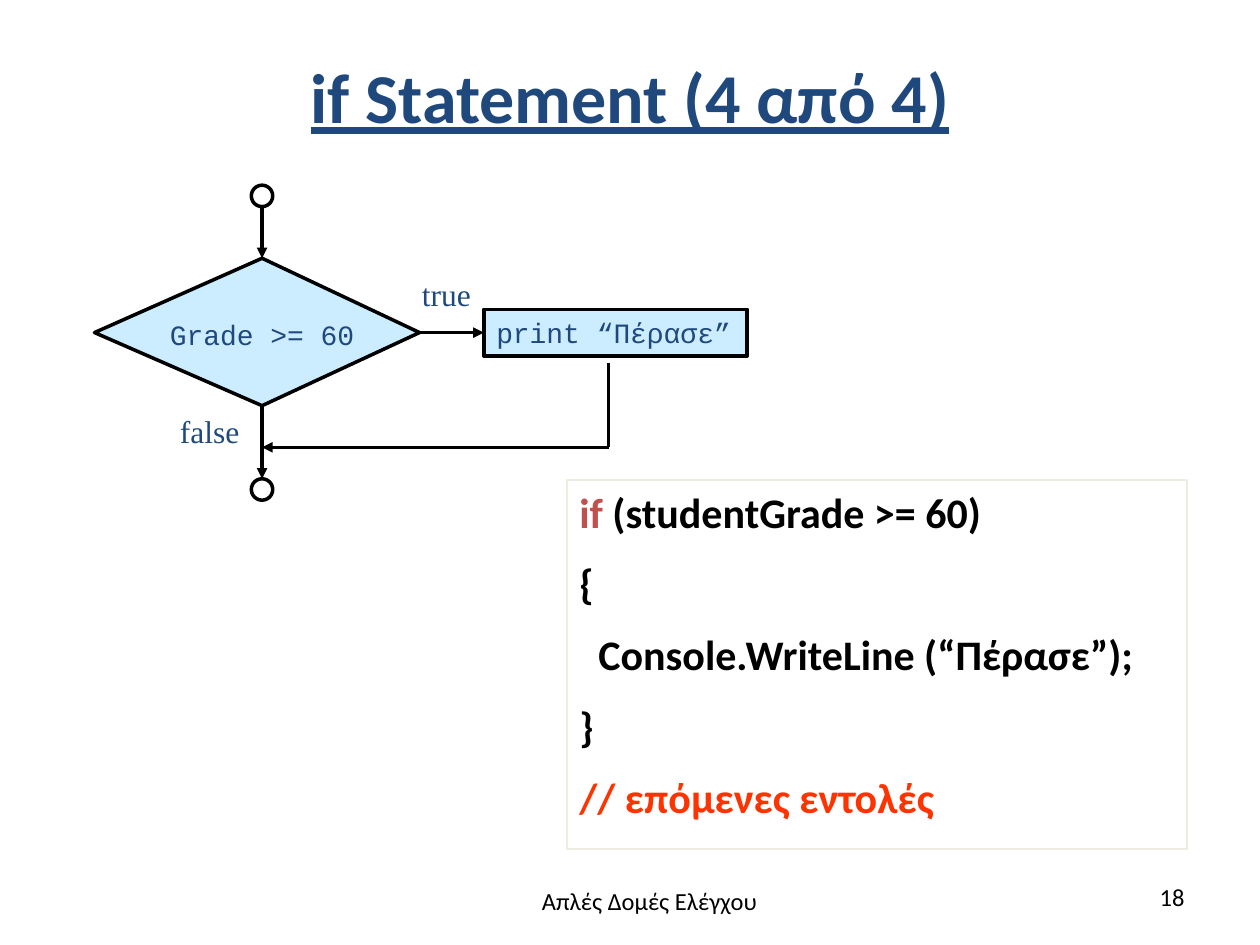
from lxml import etree
from pptx import Presentation
from pptx.dml.color import RGBColor
from pptx.enum.shapes import MSO_CONNECTOR, MSO_SHAPE
from pptx.enum.text import MSO_ANCHOR, PP_ALIGN
from pptx.oxml.ns import qn
from pptx.util import Inches, Pt

STRAIGHT = MSO_CONNECTOR.STRAIGHT
RECTANGLE = MSO_SHAPE.RECTANGLE
OVAL = MSO_SHAPE.OVAL
TOP, MIDDLE = MSO_ANCHOR.TOP, MSO_ANCHOR.MIDDLE
LEFT, CENTER, RIGHT = PP_ALIGN.LEFT, PP_ALIGN.CENTER, PP_ALIGN.RIGHT
LEFT_SIDE = 1

COLORS = {
    "navy": "1F497D",
    "black": "000000",
    "white": "FFFFFF",
    "sky": "CCECFF",
    "keyword": "C0504D",
    "comment": "FF3300",
    "border": "EEECE1",
}


def color(name):
    return RGBColor.from_string(COLORS[name])


def write(shape, lines, size=16, font="Calibri", ink="black", bold=False,
          underline=False, align=LEFT, anchor=TOP, wrap=True, gap=0):
    frame = shape.text_frame
    frame.word_wrap = wrap
    frame.vertical_anchor = anchor
    for index, runs in enumerate(lines):
        paragraph = frame.add_paragraph() if index else frame.paragraphs[0]
        paragraph.alignment = align
        paragraph.space_before = Pt(gap if index else 0)
        for text, run_ink in runs:
            run = paragraph.add_run()
            run.text = text
            run.font.size = Pt(size)
            run.font.name = font
            run.font.bold = bold
            run.font.underline = underline
            run.font.color.rgb = color(run_ink or ink)


def add_label(slide, box, text, **style):
    label = slide.shapes.add_textbox(*map(Inches, box))
    write(label, [[(text, None)]], **style)


def paint(shape, fill, line="black", width=2):
    shape.shadow.inherit = False
    if fill:
        shape.fill.solid()
        shape.fill.fore_color.rgb = color(fill)
    else:
        shape.fill.background()
    shape.line.color.rgb = color(line)
    shape.line.width = Pt(width)


def add_line(slide, start, end, arrow=True):
    line = slide.shapes.add_connector(STRAIGHT, *map(Inches, start + end))
    line.line.color.rgb = color("black")
    line.line.width = Pt(2)
    if arrow:
        etree.SubElement(line.line._get_or_add_ln(), qn("a:tailEnd"), type="triangle")
    etree.SubElement(line._element.spPr, qn("a:effectLst"))
    return line


def add_title(slide, box, text):
    title = slide.shapes.title
    title.left, title.top, title.width, title.height = map(Inches, box)
    write(title, [[(text, None)]], size=40, ink="navy", bold=True,
          underline=True, align=CENTER, anchor=MIDDLE)


def add_flowchart(slide, box):
    left, top, width, height = box
    axis = left + 1.33
    tip = left + 2.58
    middle = top + 1.17
    diamond_top, diamond_bottom = top + 0.58, top + 1.75
    merge = top + 2.08
    dot = 0.17
    code_style = dict(font="Courier New", ink="navy", wrap=False)
    branch_style = dict(size=18, font="Times New Roman", ink="navy", wrap=False)

    corners = [(axis, diamond_top), (tip, middle), (axis, diamond_bottom), (left, middle)]
    points = [(Inches(x), Inches(y)) for x, y in corners]
    builder = slide.shapes.build_freeform(*points[0])
    builder.add_line_segments(points[1:], close=True)
    paint(builder.convert_to_shape(), "sky")
    add_label(slide, (left + 0.5, top + 1, 1.67, 0.37), "Grade >= 60", **code_style)

    action_width, action_height = 2.09, 0.37
    action = slide.shapes.add_shape(
        RECTANGLE, Inches(left + width - action_width), Inches(middle - action_height / 2),
        Inches(action_width), Inches(action_height))
    paint(action, "sky")
    write(action, [[("print “Πέρασε”", None)]], **code_style)

    for dot_top in (top, top + height - dot):
        circle = slide.shapes.add_shape(
            OVAL, Inches(axis - dot / 2), Inches(dot_top), Inches(dot), Inches(dot))
        paint(circle, "white")

    add_line(slide, (axis, top + dot), (axis, diamond_top))
    add_line(slide, (axis, diamond_bottom), (axis, top + height - dot))
    true_arrow = add_line(slide, (tip, middle), (left + width - action_width, middle))
    true_arrow.end_connect(action, LEFT_SIDE)
    corner = (left + 4.08, merge)
    add_line(slide, corner, (axis, merge))
    add_line(slide, corner, (corner[0], top + 1.41), arrow=False)

    add_label(slide, (left + 2.5, top + 0.66, 0.59, 0.4), "true", **branch_style)
    add_label(slide, (left + 0.58, diamond_bottom, 0.67, 0.4), "false", **branch_style)


def add_code(slide, box):
    panel = slide.shapes.add_shape(RECTANGLE, *map(Inches, box))
    paint(panel, None, line="border", width=0.75)
    write(panel, [
        [("if ", "keyword"), ("(studentGrade >= 60)", None)],
        [("{", None)],
        [("  Console.WriteLine (“Πέρασε”);", None)],
        [("}", None)],
        [("// επόμενες εντολές", "comment")],
    ], size=24, bold=True, gap=12)


def add_footer(slide, box):
    left, top, width, height = box
    number_width = 2.33
    add_label(slide, (left, top + 0.03, 3.49, height), "Απλές Δομές Ελέγχου",
              size=14, align=CENTER)
    add_label(slide, (left + width - number_width, top, number_width, height), "18",
              size=14, align=RIGHT)


def main():
    presentation = Presentation()
    presentation.slide_width = Inches(10)
    presentation.slide_height = Inches(7.5)
    slide = presentation.slides.add_slide(presentation.slide_layouts[5])
    add_title(slide, (0.5, 0.05, 9, 1.42), "if Statement (4 από 4)")
    add_flowchart(slide, (0.75, 1.47, 5.18, 2.5))
    add_code(slide, (4.5, 3.81, 4.92, 2.93))
    add_footer(slide, (3.41, 6.95, 6.09, 0.4))
    presentation.save("out.pptx")


if __name__ == "__main__":
    main()
